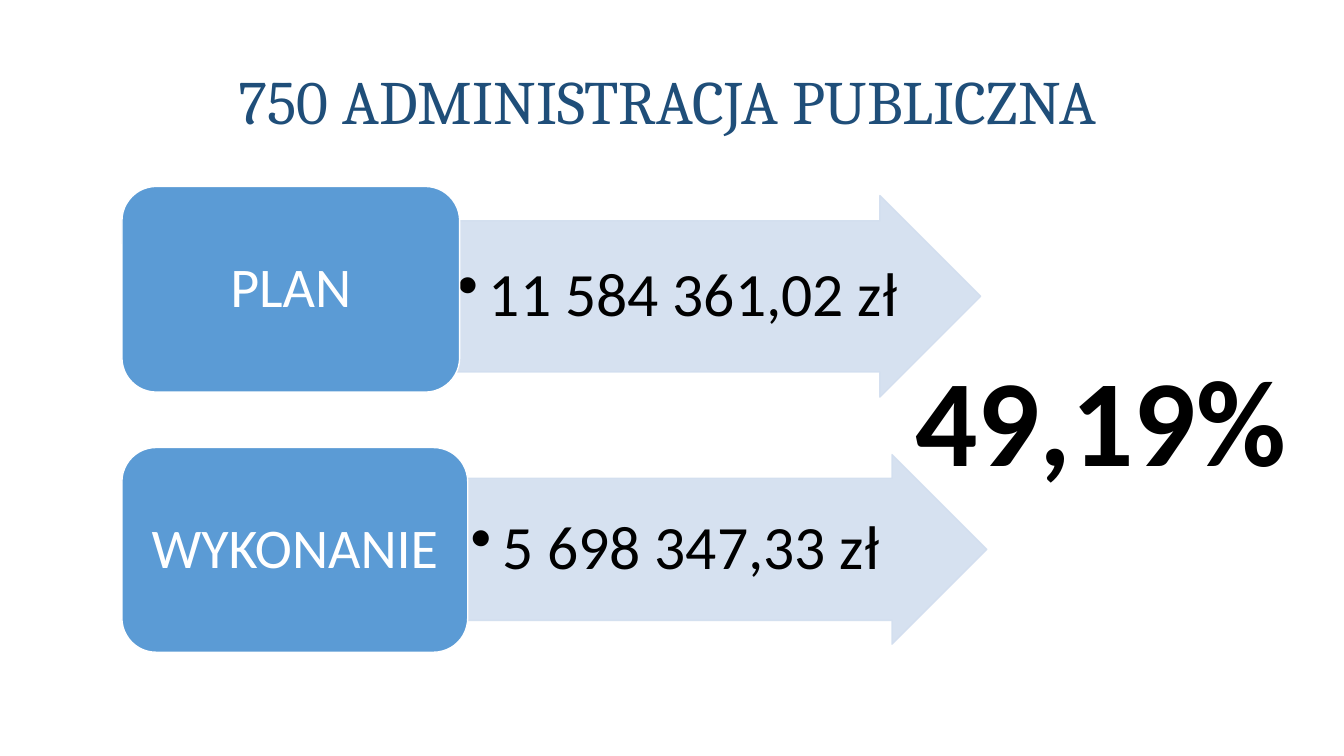
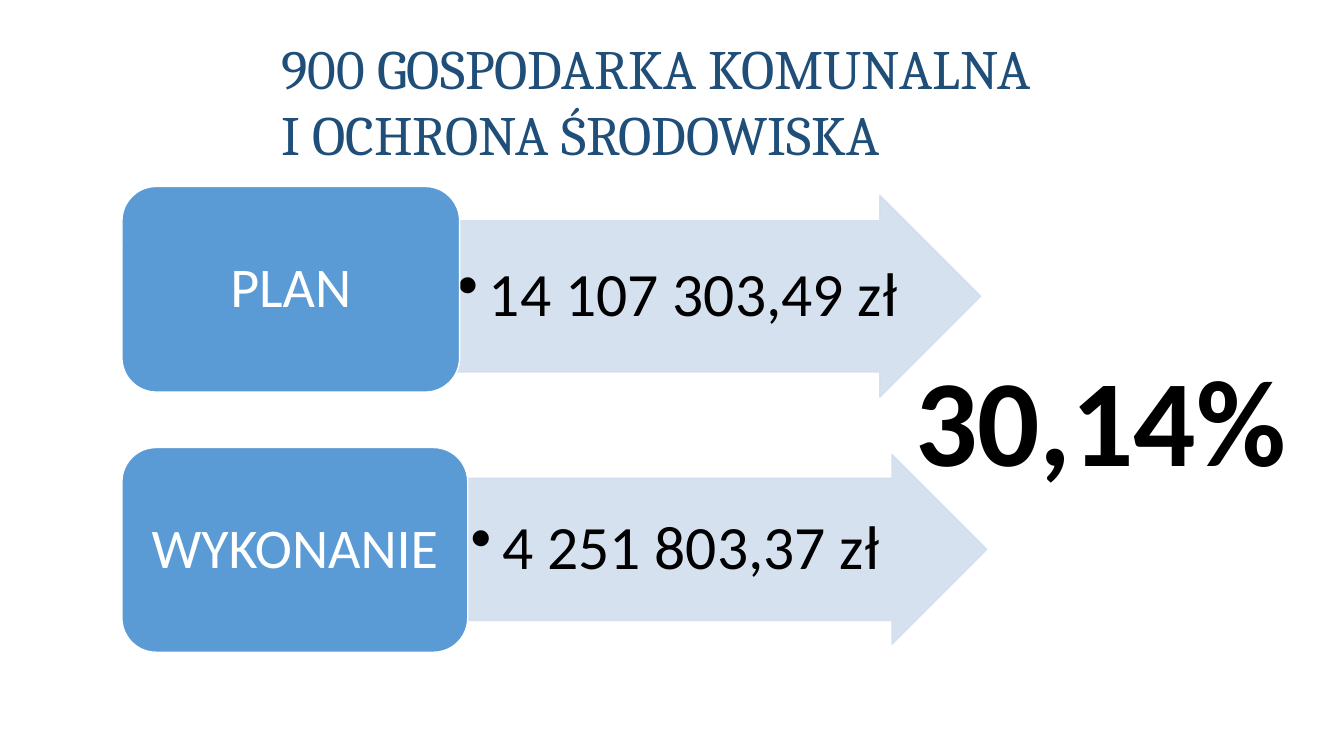
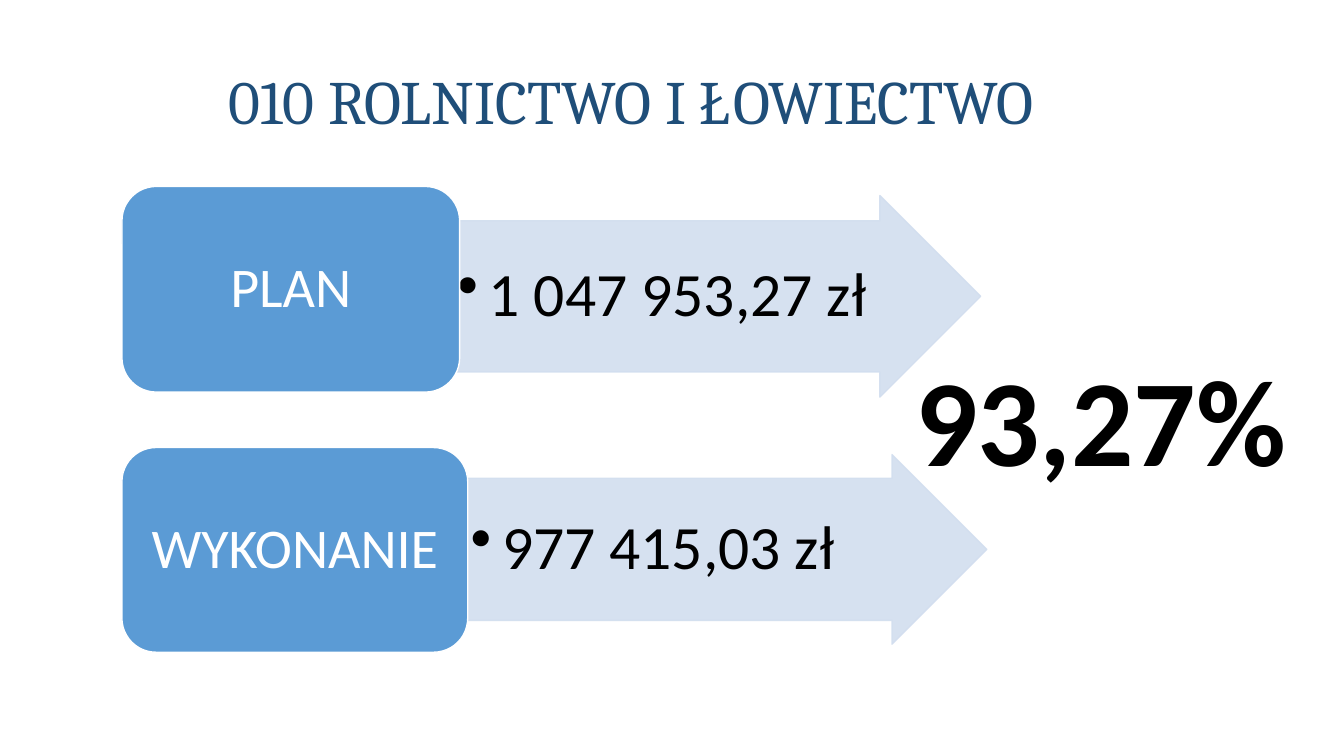
from lxml.etree import SubElement
from pptx import Presentation
from pptx.dml.color import RGBColor
from pptx.enum.shapes import MSO_SHAPE
from pptx.enum.text import MSO_ANCHOR, PP_ALIGN
from pptx.oxml.ns import qn
from pptx.util import Pt

HEX = {
    "title": "1F4E79",
    "box": "5B9BD5",
    "arrow": "D2DEEF",
    "white": "FFFFFF",
    "black": "000000",
}

# Rows: label, box (left, top, width, height), arrow (dx, dy, width, height)
ROWS = [
    ("PLAN", (87.1, 133.2, 241.2, 146.9), (237.6, 6.5, 375.8, 144)),
    ("WYKONANIE", (87.1, 319.7, 247, 146.2), (247, 5, 370.8, 135.4)),
]

# Slides: title, title left, title size, amounts by row, share done
PAGES = [
    ("750 ADMINISTRACJA PUBLICZNA", 163.4, 44,
     ("11 584 361,02 zł", "5 698 347,33 zł"), "49,19%"),
    ("900 GOSPODARKA KOMUNALNA\vI OCHRONA ŚRODOWISKA", 193.7, 39.6,
     ("14 107 303,49 zł", "4 251 803,37 zł"), "30,14%"),
    ("010 ROLNICTWO I ŁOWIECTWO", 156.2, 44,
     ("1 047 953,27 zł", "977 415,03 zł"), "93,27%"),
]


def color(name):
    return RGBColor.from_string(HEX[name])


def write(shape, text, size, ink, face="Calibri", pad=(7.2, 3.6),
          align=PP_ALIGN.LEFT, bold=False, lines=None, hang=0):
    """Fill a shape with one middle-anchored paragraph."""
    frame = shape.text_frame
    frame.word_wrap = True
    frame.vertical_anchor = MSO_ANCHOR.MIDDLE
    frame.margin_left = frame.margin_right = Pt(pad[0])
    frame.margin_top = frame.margin_bottom = Pt(pad[1])
    para = frame.paragraphs[0]
    para.text = text
    para.alignment = align
    if hang:
        props = para._p.get_or_add_pPr()
        props.set("marL", str(Pt(hang)))
        props.set("indent", str(-Pt(hang)))
        SubElement(props, qn("a:buChar")).set("char", "•")
    if lines:
        para.line_spacing = lines
    font = para.font
    font.name, font.size, font.bold = face, Pt(size), bold
    font.color.rgb = color(ink)


def label(slide, box, text, size, ink, **style):
    write(slide.shapes.add_textbox(*map(Pt, box)), text, size, ink, **style)


def block(slide, kind, box, fill, edge):
    shape = slide.shapes.add_shape(kind, *map(Pt, box))
    shape.shadow.inherit = False
    shape.fill.solid()
    shape.fill.fore_color.rgb = color(fill)
    shape.line.color.rgb = color(edge)
    shape.line.width = Pt(1)
    return shape


def row(slide, box, shift, name, sum_):
    left, top = box[:2]
    dx, dy, width, height = shift

    # Arrow with the amount, slightly see-through
    arrow = block(slide, MSO_SHAPE.RIGHT_ARROW,
                  (left + dx, top + dy, width, height), "arrow", "arrow")
    arrow.adjustments[0] = 0.75
    arrow.adjustments[1] = 0.5
    for tint in arrow._element.spPr.iter(qn("a:srgbClr")):
        SubElement(tint, qn("a:alpha")).set("val", "90000")
    write(arrow, sum_, 44, "black", pad=(2, 2), lines=0.9, hang=22.5)

    # Box with the row name
    card = block(slide, MSO_SHAPE.ROUNDED_RECTANGLE, box, "box", "white")
    write(card, name, 40, "white", pad=(10, 6), lines=0.9,
          align=PP_ALIGN.CENTER)


def page(deck, title, left, size, sums, share):
    slide = deck.slides.add_slide(deck.slide_layouts[6])
    label(slide, (left, 19.4, 828, 104.4), title, size, "title",
          face="Cambria")
    for (name, box, shift), sum_ in zip(ROWS, sums):
        row(slide, box, shift, name, sum_)
    label(slide, (646.6, 241.2, 293.8, 113.8), share, 88, "black", bold=True)


def main():
    deck = Presentation()
    deck.slide_width, deck.slide_height = Pt(960), Pt(540)
    for item in PAGES:
        page(deck, *item)
    deck.save("out.pptx")


if __name__ == "__main__":
    main()
